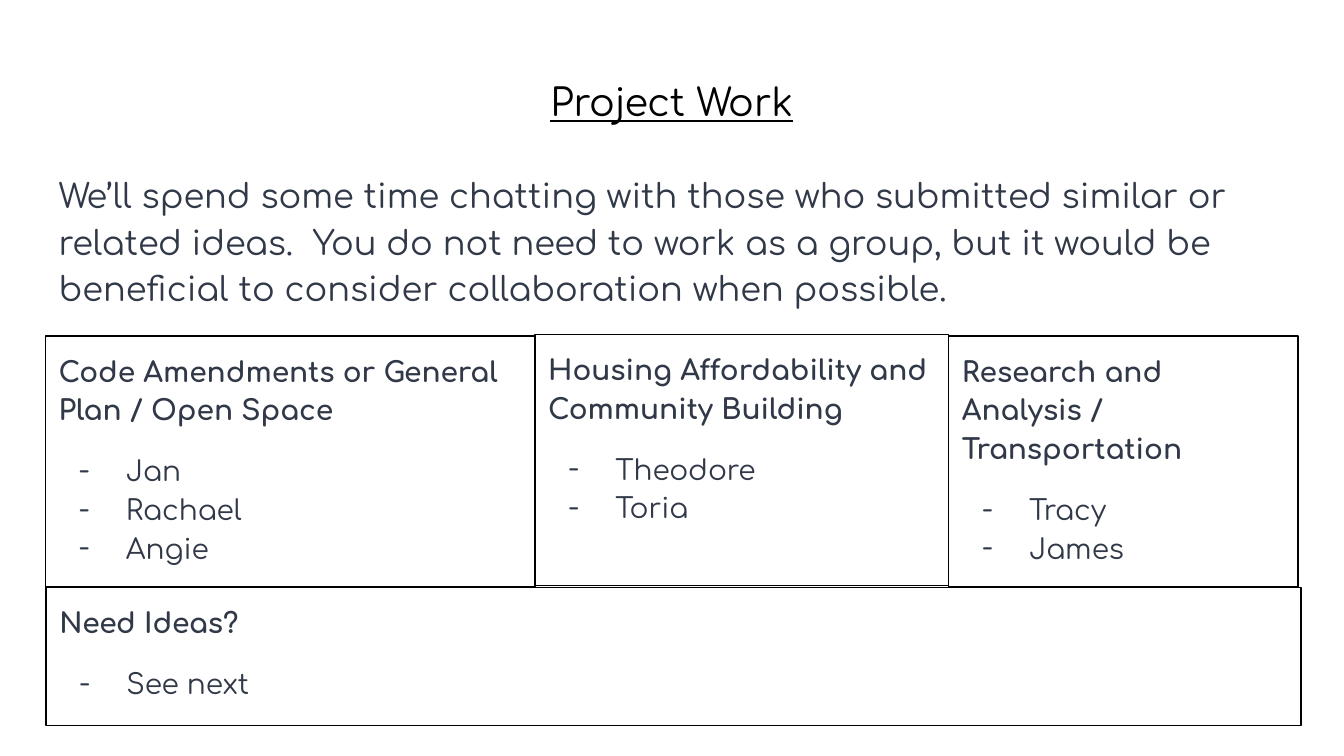
from dataclasses import dataclass
from itertools import accumulate

from lxml.etree import SubElement
from pptx import Presentation
from pptx.dml.color import RGBColor as RGB
from pptx.enum.text import MSO_ANCHOR as Anchor, MSO_AUTO_SIZE as AutoSize, PP_ALIGN as Align
from pptx.oxml.ns import qn
from pptx.util import Cm, Pt


@dataclass(frozen=True)
class Theme:
    font: str = "Comfortaa"
    ink: str = "313948"
    black: str = "000000"
    title: float = 20.4
    intro: float = 18
    box: float = 15
    border: float = 0.75
    gap: float = 12
    line_spacing: float = 1.15


@dataclass(frozen=True)
class Area:
    left: float
    top: float
    width: float
    height: float


@dataclass(frozen=True)
class Topic:
    heading: str
    items: tuple[str, ...]
    area: Area


THEME = Theme()
LEFT, INSET = 0.86, 0.25
INDENT, HANGING = 1.27, -0.89
WIDTHS = (9.25, 7.82, 6.6)
LEFTS = tuple(accumulate(WIDTHS[:-1], initial=LEFT))
TOP, HEIGHT = 6.35, 4.75

TITLE_AREA = Area(LEFT, 1.24, sum(WIDTHS), 1.6)
INTRO_AREA = Area(LEFT, 2.95, sum(WIDTHS), 3.28)
INTRO = (
    "We’ll spend some time chatting with those who submitted similar or related ideas.  "
    "You do not need to work as a group, but it would be beneficial to consider "
    "collaboration when possible."
)
TOPICS = (
    Topic("Code Amendments or General Plan / Open Space", ("Jan", "Rachael", "Angie"),
          Area(LEFTS[0], TOP, WIDTHS[0], HEIGHT)),
    Topic("Housing Affordability and Community Building", ("Theodore", "Toria"),
          Area(LEFTS[1], TOP - 0.03, WIDTHS[1], HEIGHT)),
    Topic("Research and Analysis / Transportation", ("Tracy", "James"),
          Area(LEFTS[2], TOP, WIDTHS[2], HEIGHT)),
    Topic("Need Ideas?", ("See next",),
          Area(LEFT + 0.01, TOP + HEIGHT, 23.72, 2.62)),
)


def place(sp, area: Area):
    """Move a text shape to its area and return its cleared text frame."""
    sp.left, sp.top = Cm(area.left), Cm(area.top)
    sp.width, sp.height = Cm(area.width), Cm(area.height)
    tf = sp.text_frame
    tf.clear()
    tf.word_wrap = True
    tf.auto_size = AutoSize.NONE
    tf.vertical_anchor = Anchor.TOP
    tf.margin_left = tf.margin_right = tf.margin_top = tf.margin_bottom = Cm(INSET)
    return tf


def write(p, text: str, *, size: float, color: str = THEME.ink, bold: bool = False,
          underline: bool = False, align=Align.LEFT, spacing: float = THEME.line_spacing,
          before: float = 0, after: float = 0, bullet: str = "") -> None:
    p.alignment, p.line_spacing = align, spacing
    p.space_before, p.space_after = Pt(before), Pt(after)
    r = p.add_run()
    r.text = text
    font = r.font
    font.name, font.size, font.bold, font.underline = THEME.font, Pt(size), bold, underline
    font.color.rgb = RGB.from_string(color)
    set_bullet(p, bullet, color)


def set_bullet(p, bullet: str, color: str) -> None:
    """Give the paragraph a hanging bullet, or none when bullet is empty."""
    pPr = p._p.get_or_add_pPr()
    pPr.set("marL", str(Cm(INDENT) if bullet else 0))
    pPr.set("indent", str(Cm(HANGING) if bullet else 0))
    if bullet:
        SubElement(SubElement(pPr, qn("a:buClr")), qn("a:srgbClr"), val=color)
        SubElement(pPr, qn("a:buFont"), typeface=THEME.font)
        SubElement(pPr, qn("a:buChar"), char=bullet)
    else:
        SubElement(pPr, qn("a:buNone"))


def draw_topic(sp, topic: Topic) -> None:
    tf = place(sp, topic.area)
    sp.line.color.rgb = RGB.from_string(THEME.black)
    sp.line.width = Pt(THEME.border)
    write(tf.paragraphs[0], topic.heading, size=THEME.box, bold=True)
    for i, item in enumerate(topic.items):
        write(tf.add_paragraph(), item, size=THEME.box, bullet="-",
              before=0 if i else THEME.gap)


def main() -> None:
    prs = Presentation()
    prs.slide_width, prs.slide_height = Cm(25.4), Cm(14.29)
    s = prs.slides.add_slide(prs.slide_layouts.get_by_name("Comparison"))
    title, *boxes = s.placeholders

    write(place(title, TITLE_AREA).paragraphs[0], "Project Work", size=THEME.title,
          color=THEME.black, underline=True, align=Align.CENTER, spacing=1.0)
    intro = s.shapes.add_textbox(0, 0, 0, 0)
    write(place(intro, INTRO_AREA).paragraphs[0], INTRO, size=THEME.intro, after=THEME.gap)
    for sp, topic in zip(boxes, TOPICS):
        draw_topic(sp, topic)

    prs.save("out.pptx")


if __name__ == "__main__":
    main()
